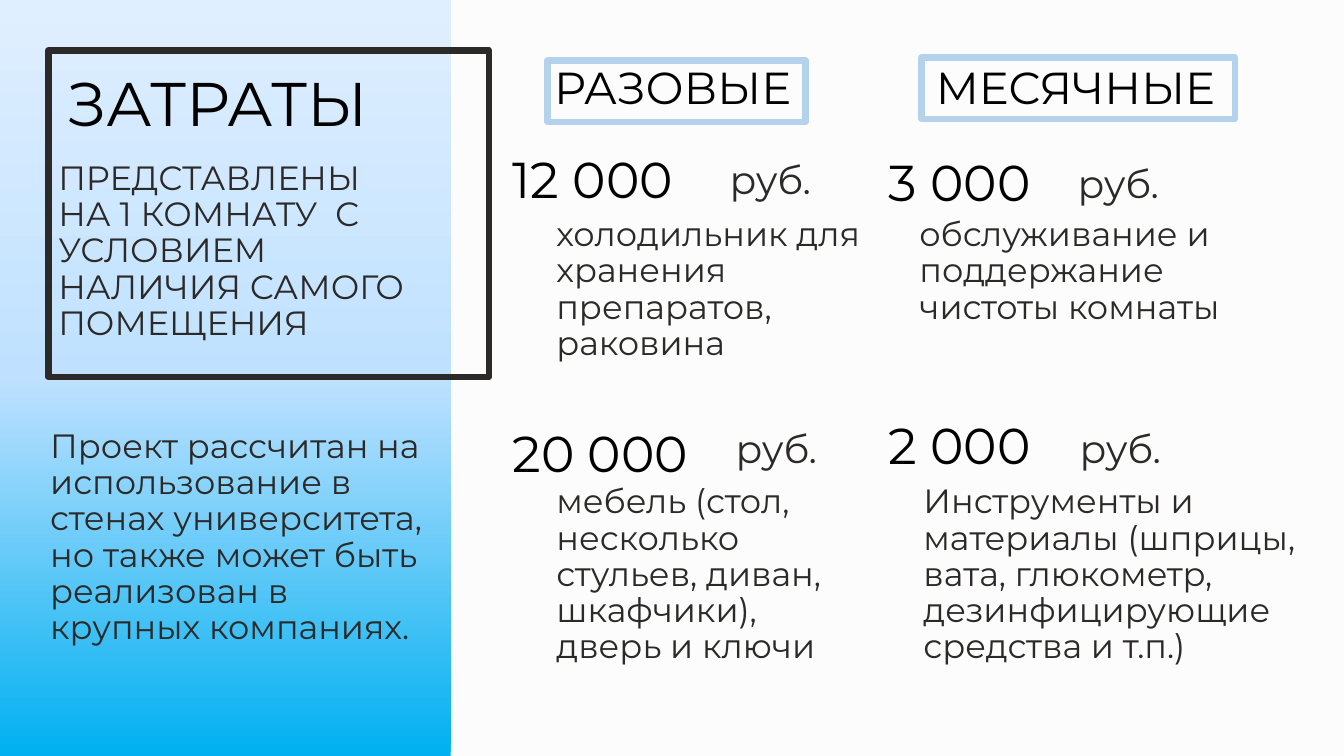
from copy import deepcopy

from pptx import Presentation
from pptx.dml.color import RGBColor
from pptx.enum.shapes import MSO_SHAPE as Shape
from pptx.enum.text import MSO_ANCHOR as Anchor, PP_ALIGN as Align
from pptx.oxml.ns import qn
from pptx.util import Inches, Pt

BLACK = RGBColor(0x00, 0x00, 0x00)
CHARCOAL = RGBColor(0x2B, 0x2A, 0x29)
PALE_BLUE = RGBColor(0xB5, 0xD2, 0xEC)
PAPER = RGBColor(0xFC, 0xFC, 0xFC)
PANEL_STOPS = [
    (0, RGBColor(0x00, 0xB0, 0xF0)),
    (0.5, RGBColor(0xBF, 0xE1, 0xFF)),
    (1, RGBColor(0xE0, 0xEF, 0xFF)),
]


class CostPage:
    font = "Montserrat"
    line_spacing = 0.9
    frame_width = Pt(4.5)

    def __init__(self, deck):
        self.page = deck.slides.add_slide(deck.slide_layouts[6])
        background = self.page.background.fill
        background.solid()
        background.fore_color.rgb = PAPER

    def rectangle(self, left, top, width, height):
        box = self.page.shapes.add_shape(
            Shape.RECTANGLE, *map(Inches, (left, top, width, height)))
        box.shadow.inherit = False
        return box

    def frame(self, left, top, width, height, color):
        box = self.rectangle(left, top, width, height)
        box.fill.background()
        box.line.color.rgb = color
        box.line.width = self.frame_width

    def gradient_panel(self, left, top, width, height, stops):
        """Draw a panel whose colour stops run from bottom to top."""
        panel = self.rectangle(left, top, width, height)
        panel.line.fill.background()
        panel.fill.gradient()
        panel.fill.gradient_angle = 90
        stop_list = next(panel.element.iter(qn("a:gsLst")))
        while len(stop_list) < len(stops):
            stop_list.append(deepcopy(stop_list[-1]))
        for stop, (position, color) in zip(panel.fill.gradient_stops, stops):
            stop.position = position
            stop.color.rgb = color

    def text(self, text, left, top, width, height, size=24, color=CHARCOAL,
             align=Align.LEFT, anchor=Anchor.TOP, lead=None):
        """Add a text box; lead is the font and size of an opening space."""
        box = self.page.shapes.add_textbox(
            *map(Inches, (left, top, width, height)))
        frame = box.text_frame
        frame.word_wrap = True
        frame.vertical_anchor = anchor
        for index, line in enumerate(text.split("\n")):
            para = frame.add_paragraph() if index else frame.paragraphs[0]
            para.alignment = align
            para.line_spacing = self.line_spacing
            spans = [(line, self.font, size)]
            if lead:
                spans.insert(0, (" ", *lead))
            for content, font, points in spans:
                span = para.add_run()
                span.text = content
                span.font.name = font
                span.font.size = Pt(points)
                span.font.color.rgb = color

    def heading(self, text, left, top, width, height, size=32):
        self.text(text, left, top, width, height, size=size, color=BLACK,
                  align=Align.CENTER)

    def amount(self, number, left, top, unit_left, unit_top):
        self.text(number, left, top, 2.7, 1.08, size=36, color=BLACK,
                  anchor=Anchor.MIDDLE, lead=(self.font, 54))
        self.text("руб.", unit_left, unit_top, 2, 0.53, size=28,
                  lead=("Roboto", 20))


def main():
    deck = Presentation()
    deck.slide_width, deck.slide_height = Inches(13.33), Inches(7.5)
    costs = CostPage(deck)

    costs.gradient_panel(0, 0, 4.47, 7.5, PANEL_STOPS)
    costs.frame(0.48, 0.5, 4.37, 3.24, CHARCOAL)
    costs.heading("ЗАТРАТЫ", -0.35, 0.68, 5.02, 0.77, size=44)
    costs.text("ПРЕДСТАВЛЕНЫ НА 1 КОМНАТУ  С УСЛОВИЕМ НАЛИЧИЯ САМОГО ПОМЕЩЕНИЯ",
               0.48, 1.55, 3.76, 1.92)
    costs.text("Проект рассчитан на использование в стенах университета,\n"
               "но также может быть реализован в крупных компаниях.",
               0.4, 4.21, 4.07, 2.28)

    costs.frame(5.43, 0.6, 2.56, 0.61, PALE_BLUE)
    costs.heading("РАЗОВЫЕ", 4.16, 0.6, 5.02, 0.59)
    costs.amount("12 000", 4.79, 1.19, 7.07, 1.54)
    costs.text("холодильник для хранения препаратов, раковина",
               5.42, 2.11, 3.33, 1.56)
    costs.amount("20 000", 4.79, 3.9, 7.13, 4.21)
    costs.text("мебель (стол, несколько стульев, диван, шкафчики), "
               "дверь и ключи", 5.42, 4.76, 3.26, 1.92)

    costs.frame(9.14, 0.57, 3.11, 0.61, PALE_BLUE)
    costs.heading("МЕСЯЧНЫЕ", 8.75, 0.6, 3.83, 0.59)
    costs.amount("3 000", 8.52, 1.22, 10.52, 1.58)
    costs.text("обслуживание и поддержание чистоты комнаты",
               9.02, 2.11, 3.62, 1.19)
    costs.amount("2 000", 8.52, 3.83, 10.54, 4.21)
    costs.text("Инструменты и материалы (шприцы, вата, глюкометр, "
               "дезинфицирующие средства и т.п.)", 9.06, 4.76, 4.21, 1.92)

    deck.save("out.pptx")


if __name__ == "__main__":
    main()
